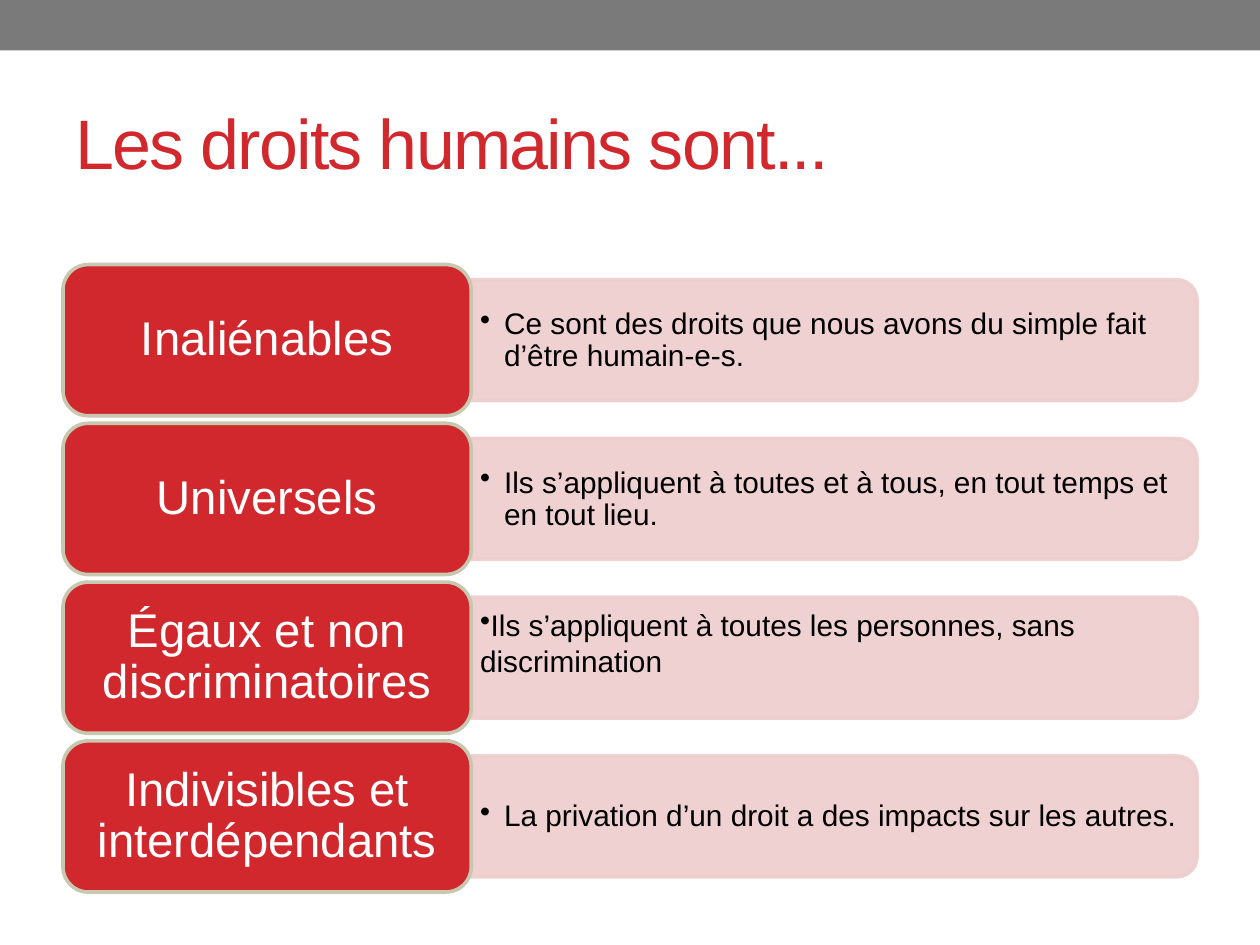
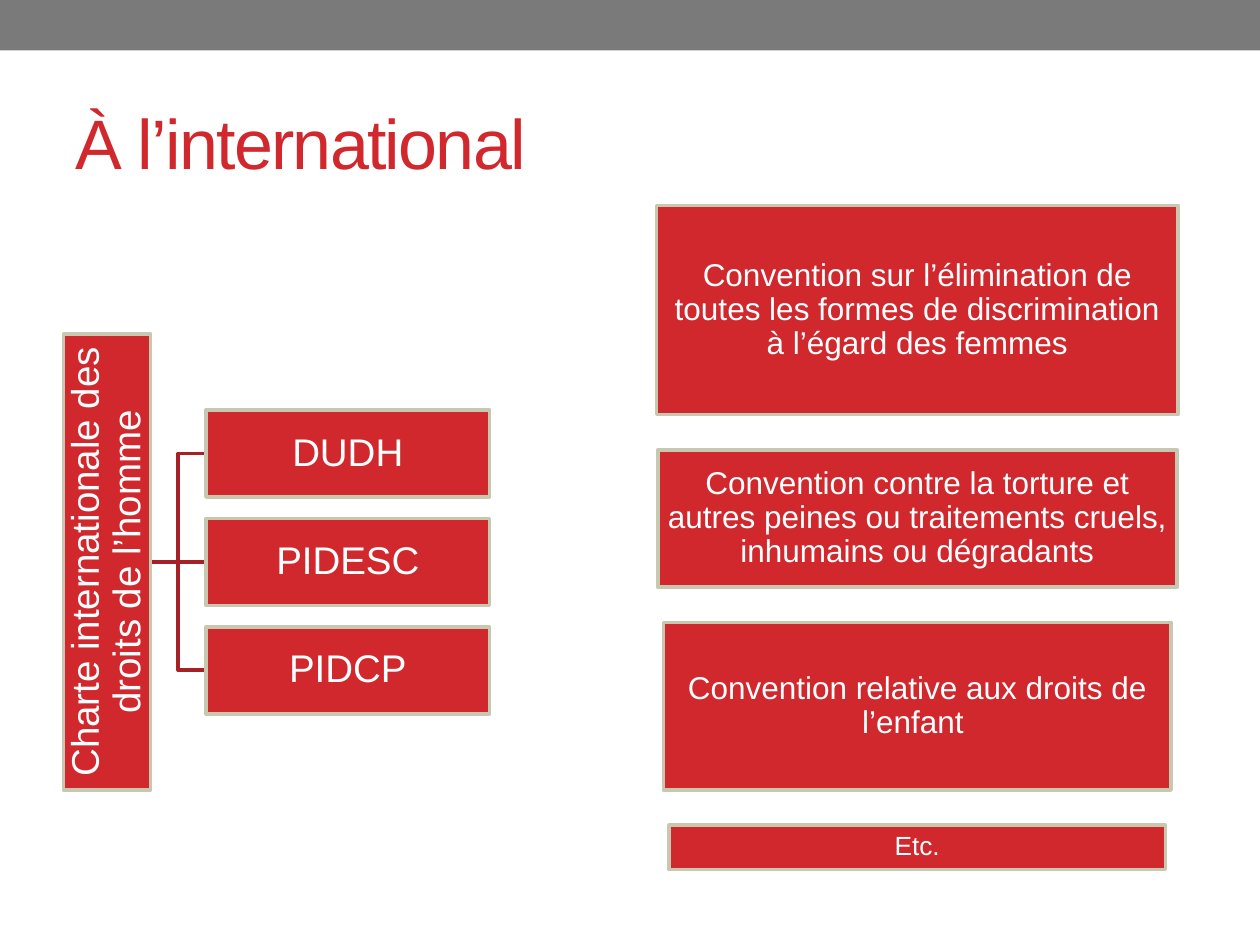
"""Build two slides on human rights: their qualities and the international treaties."""
import pptx
import pptx.dml.color
import pptx.enum.shapes
import pptx.enum.text
import pptx.oxml.ns
import pptx.util
from lxml import etree

Inches = pptx.util.Inches
SHAPE = pptx.enum.shapes.MSO_SHAPE
CONNECTOR = pptx.enum.shapes.MSO_CONNECTOR
ALIGN = pptx.enum.text.PP_ALIGN
qn = pptx.oxml.ns.qn

RED = pptx.dml.color.RGBColor(0xD1, 0x28, 0x2E)
DARK_RED = pptx.dml.color.RGBColor(0xA7, 0x20, 0x25)
PINK = pptx.dml.color.RGBColor(0xEE, 0xCD, 0xCD)
SAND = pptx.dml.color.RGBColor(0xC8, 0xC8, 0xB1)
GREY = pptx.dml.color.RGBColor(0x7A, 0x7A, 0x7A)
WHITE = pptx.dml.color.RGBColor(0xFF, 0xFF, 0xFF)
BLACK = pptx.dml.color.RGBColor(0, 0, 0)
FONT = "Arial"
LINE_WIDTH = pptx.util.Pt(2.08)

QUALITIES_TITLE = "Les droits humains sont..."
HANGING = {"hang": 0.19, "spacing": 0.9}
FLUSH = {"hang": 0, "spacing": 1, "insets": (0.07, 0.04, 0.07, 0.29)}
QUALITIES = [
    ("Inaliénables", "Ce sont des droits que nous avons du simple fait d’être humain-e-s.", HANGING),
    ("Universels", "Ils s’appliquent à toutes et à tous, en tout temps et en tout lieu.", HANGING),
    ("Égaux et non discriminatoires",
     "Ils s’appliquent à toutes les personnes, sans discrimination", FLUSH),
    ("Indivisibles et interdépendants",
     "La privation d’un droit a des impacts sur les autres.", HANGING),
]

TREATIES_TITLE = "À l’international"
CHARTER = "Charte internationale des droits de l’homme"
INSTRUMENTS = ["DUDH", "PIDESC", "PIDCP"]
CONVENTIONS = [
    ("Convention sur l’élimination de toutes les formes de discrimination à l’égard des femmes",
     4.14, 1.66, 18, 0.07),
    ("Convention contre la torture et autres peines ou traitements cruels, "
     "inhumains ou dégradants", 4.12, 1.09, 18, 0.07),
    ("Convention relative aux droits de l’enfant ", 4.03, 1.33, 18, 0.07),
    ("Etc.", 3.94, 0.35, 15, 0.06),
]


def write(holder, text, size, color=WHITE, align=ALIGN.CENTER, spacing=0.9,
          insets=(0.1, 0.05, 0.1, 0.05), hang=None, tracking=None):
    """Put one formatted paragraph in a shape or text box."""
    frame = holder.text_frame
    frame.word_wrap = True
    frame.vertical_anchor = pptx.enum.text.MSO_ANCHOR.MIDDLE
    (frame.margin_left, frame.margin_top,
     frame.margin_right, frame.margin_bottom) = map(Inches, insets)
    paragraph = frame.paragraphs[0]
    paragraph.alignment = align
    paragraph.line_spacing = spacing
    run = paragraph.add_run()
    run.text = text
    run.font.name = FONT
    run.font.size = pptx.util.Pt(size)
    run.font.color.rgb = color
    if tracking is not None:
        run.font._element.set("spc", str(tracking * 100))
    if hang is not None:
        properties = paragraph._p.get_or_add_pPr()
        properties.set("marL", str(Inches(hang)))
        properties.set("indent", str(-Inches(hang)))
        etree.SubElement(properties, qn("a:buChar")).set("char", "•")


def box_at(left, top, width, height):
    """Convert a box in inches to lengths."""
    return tuple(map(Inches, (left, top, width, height)))


def add_box(slide, preset, center_x, center_y, width, height, fill, line=None, rotation=0):
    """Draw a filled shape about its centre."""
    box = slide.shapes.add_shape(
        preset, *box_at(center_x - width / 2, center_y - height / 2, width, height))
    box.shadow.inherit = False
    box.rotation = rotation
    box.fill.solid()
    box.fill.fore_color.rgb = fill
    if line is None:
        box.line.fill.background()
    else:
        box.line.color.rgb = line
        box.line.width = LINE_WIDTH
    return box


def add_titled_slide(deck, title):
    """Add a slide with the grey top band and the title."""
    slide = deck.slides.add_slide(deck.slide_layouts[6])
    add_box(slide, SHAPE.RECTANGLE, 5, 0.2, 10, 0.4, GREY)
    heading = slide.shapes.add_textbox(*box_at(0.5, 0.58, 9, 1.08))
    write(heading, title, 40, color=RED, align=ALIGN.LEFT, spacing=1, tracking=-1)
    return slide


def add_quality(slide, center_y, name, meaning, meaning_format):
    """Draw a red card and the pink band that explains it."""
    band = add_box(slide, SHAPE.ROUND_2_SAME_RECTANGLE, 6.62, center_y, 0.96, 5.76,
                   PINK, PINK, rotation=90)
    for color in band._element.spPr.iter(qn("a:srgbClr")):
        etree.SubElement(color, qn("a:alpha")).set("val", "90000")
    explanation = slide.shapes.add_textbox(*box_at(3.74, center_y - 0.43, 5.71, 0.87))
    write(explanation, meaning, 17, color=BLACK, align=ALIGN.LEFT,
          **{"insets": (0.07, 0.04, 0.07, 0.04), **meaning_format})
    card = add_box(slide, SHAPE.ROUNDED_RECTANGLE, 2.12, center_y, 3.24, 1.2, RED, SAND)
    write(card, name, 27, insets=(0.11, 0.06, 0.11, 0.06))


def add_branch(slide, start_y, end_y):
    """Link the charter to one instrument."""
    kind = CONNECTOR.STRAIGHT if start_y == end_y else CONNECTOR.ELBOW
    branch = slide.shapes.add_connector(
        kind, Inches(1.19), Inches(start_y), Inches(1.64), Inches(end_y))
    branch.line.color.rgb = DARK_RED
    branch.line.width = LINE_WIDTH
    etree.SubElement(branch._element.spPr, qn("a:effectLst"))


def add_charter(slide, center_y=4.46, pitch=0.86):
    """Draw the charter and the instruments it gathers."""
    insets = (0.02,) * 4
    middle = (len(INSTRUMENTS) - 1) / 2
    rows = [center_y + (index - middle) * pitch for index in range(len(INSTRUMENTS))]
    for row in rows:
        add_branch(slide, center_y, row)
    charter = add_box(slide, SHAPE.RECTANGLE, 0.85, center_y, 3.62, 0.69, RED, SAND, rotation=270)
    write(charter, CHARTER, 22, insets=insets)
    for row, name in zip(rows, INSTRUMENTS):
        instrument = add_box(slide, SHAPE.RECTANGLE, 2.76, row, 2.25, 0.69, RED, SAND)
        write(instrument, name, 22, insets=insets)


def add_conventions(slide, top=1.63, gap=0.28):
    """Stack the conventions with equal gaps."""
    for name, width, height, size, inset in CONVENTIONS:
        convention = add_box(slide, SHAPE.RECTANGLE, 7.28, top + height / 2,
                             width, height, RED, SAND)
        write(convention, name, size, insets=(inset,) * 4)
        top += height + gap


def main():
    """Build and save the deck."""
    deck = pptx.Presentation()
    deck.slide_width, deck.slide_height = Inches(10), Inches(7.5)
    qualities = add_titled_slide(deck, QUALITIES_TITLE)
    for index, quality in enumerate(QUALITIES):
        add_quality(qualities, 2.7 + 1.26 * index, *quality)
    treaties = add_titled_slide(deck, TREATIES_TITLE)
    add_charter(treaties)
    add_conventions(treaties)
    deck.save("out.pptx")


if __name__ == "__main__":
    main()
